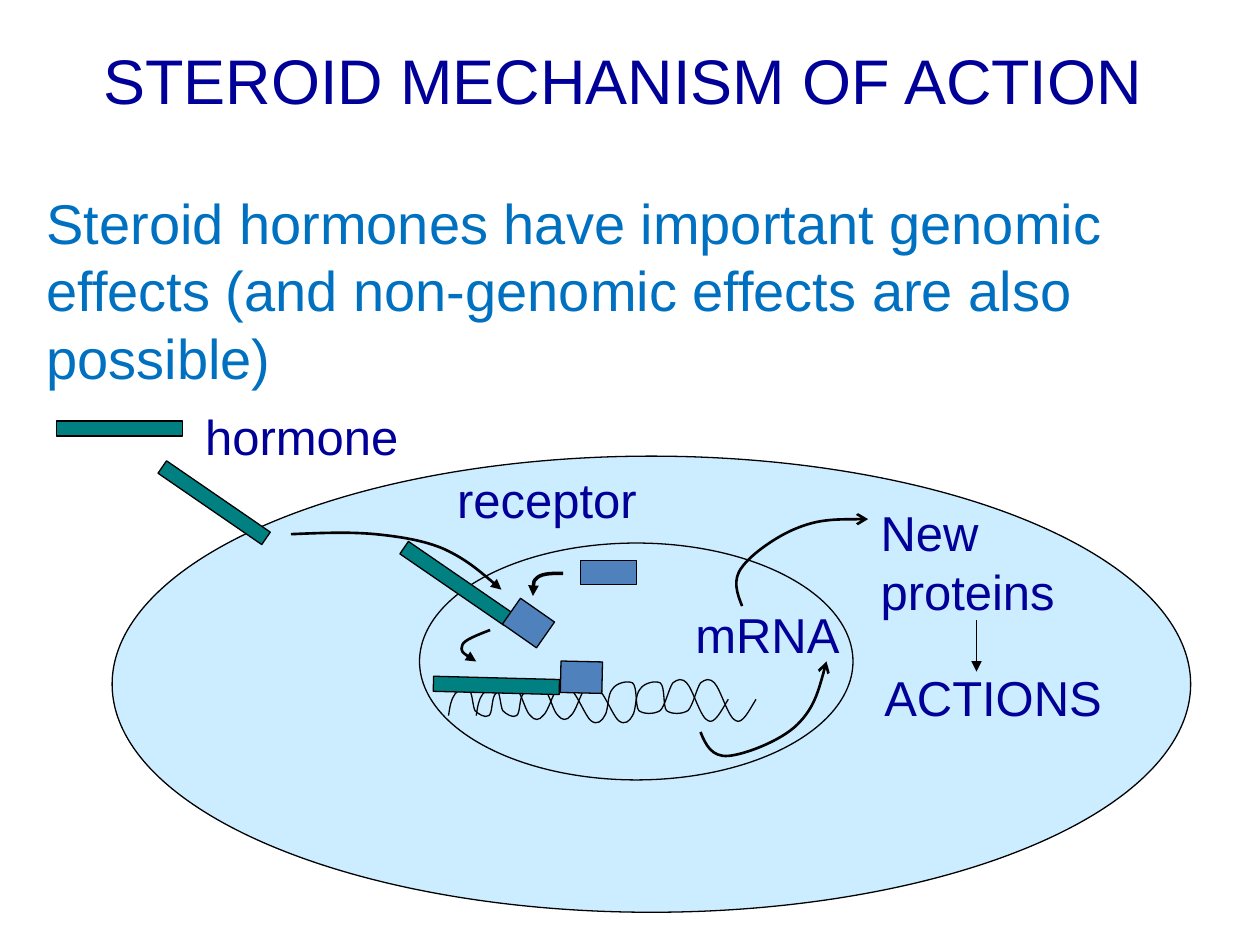
from pptx import Presentation
from pptx.dml.color import RGBColor
from pptx.enum.shapes import MSO_CONNECTOR as CONN, MSO_SHAPE as SHAPE
from pptx.enum.text import PP_ALIGN as ALIGN
from pptx.oxml.ns import qn
from pptx.util import Inches, Pt
from lxml.etree import SubElement

NAVY = RGBColor(0x00, 0x00, 0x99)
BLUE = RGBColor(0x00, 0x70, 0xC0)
CELL = RGBColor(0xCC, 0xEC, 0xFF)
HORMONE = RGBColor(0x00, 0x80, 0x80)
RECEPTOR = RGBColor(0x4F, 0x81, 0xBD)
BLACK = RGBColor(0x00, 0x00, 0x00)

HELIX_START = (3.56, 5.68)
HELIX_SHIFT = 0.22
HELIX = [
    (3.57, 5.61), (3.58, 5.55), (3.61, 5.51), (3.64, 5.47), (3.69, 5.45), (3.72, 5.47),
    (3.75, 5.49), (3.75, 5.6), (3.77, 5.64), (3.8, 5.67), (3.85, 5.7), (3.88, 5.68),
    (3.91, 5.66), (3.9, 5.55), (3.93, 5.51), (3.97, 5.47), (4.05, 5.44), (4.1, 5.47),
    (4.14, 5.5), (4.17, 5.65), (4.21, 5.68), (4.24, 5.72), (4.28, 5.72), (4.31, 5.68),
    (4.35, 5.65), (4.39, 5.5), (4.42, 5.47), (4.46, 5.43), (4.49, 5.42), (4.53, 5.47),
    (4.58, 5.51), (4.65, 5.69), (4.69, 5.72), (4.74, 5.76), (4.78, 5.72), (4.8, 5.68),
    (4.83, 5.64), (4.82, 5.51), (4.86, 5.47), (4.89, 5.42), (4.98, 5.4), (5.02, 5.42),
    (5.06, 5.45), (5.04, 5.6), (5.07, 5.64), (5.11, 5.67), (5.19, 5.67), (5.24, 5.64),
    (5.28, 5.6), (5.31, 5.46), (5.34, 5.42), (5.38, 5.39), (5.41, 5.38), (5.45, 5.42),
    (5.5, 5.47), (5.56, 5.7), (5.62, 5.72), (5.67, 5.75), (5.72, 5.65), (5.78, 5.55),
]


class Diagram:
    font = "Arial"
    thin = 0.75

    def __init__(self, slide):
        self.slide = slide
        self.shapes = slide.shapes

    def outline(self, sp, width, head=None):
        sp.line.color.rgb = BLACK
        sp.line.width = Pt(width)
        if head:
            SubElement(sp.line._get_or_add_ln(), qn("a:tailEnd"), type=head)

    def shape(self, kind, left, top, width, height, fill, rotation=0):
        sp = self.shapes.add_shape(kind, Inches(left), Inches(top), Inches(width), Inches(height))
        sp.shadow.inherit = False
        sp.rotation = rotation
        sp.fill.solid()
        sp.fill.fore_color.rgb = fill
        self.outline(sp, self.thin)

    def hormone(self, left, top, rotation=0):
        self.shape(SHAPE.RECTANGLE, left, top, 1, 0.12, HORMONE, rotation)

    def receptor(self, left, top, width, height, rotation=0):
        self.shape(SHAPE.RECTANGLE, left, top, width, height, RECEPTOR, rotation)

    def curve(self, start, points, width, head=None):
        builder = self.shapes.build_freeform(Inches(start[0]), Inches(start[1]))
        builder.add_line_segments([(Inches(x), Inches(y)) for x, y in points], close=False)
        sp = builder.convert_to_shape()
        path = next(sp._element.iter(qn("a:path")))
        steps = path.findall(qn("a:lnTo"))
        for i in range(0, len(steps), 3):
            bezier = SubElement(path, qn("a:cubicBezTo"))
            for step in steps[i:i + 3]:
                bezier.append(step[0])
                path.remove(step)
        sp.shadow.inherit = False
        sp.fill.background()
        self.outline(sp, width, head)

    def arrow(self, x1, y1, x2, y2):
        sp = self.shapes.add_connector(CONN.STRAIGHT, Inches(x1), Inches(y1), Inches(x2), Inches(y2))
        self.outline(sp, self.thin, "triangle")
        SubElement(sp._element.spPr, qn("a:effectLst"))

    def text(self, left, top, width, height, text, wrap=False):
        sp = self.shapes.add_textbox(Inches(left), Inches(top), Inches(width), Inches(height))
        tf = sp.text_frame
        tf.word_wrap = wrap
        tf.text = text
        for p in tf.paragraphs:
            self.format(p, 28, NAVY)
        return tf

    def format(self, p, size, color):
        for r in p.runs:
            r.font.name = self.font
            r.font.size = Pt(size)
            r.font.color.rgb = color

    def heading(self, left, top, width, height, title, body):
        tf = self.text(left, top, width, height, f"{title}\n{body}", wrap=True)
        first, second = tf.paragraphs
        first.alignment = ALIGN.CENTER
        self.format(first, 36, NAVY)
        second.space_before = Pt(41)
        self.format(second, 32, BLUE)


def main():
    prs = Presentation()
    prs.slide_width, prs.slide_height = Inches(10), Inches(7.5)
    d = Diagram(prs.slides.add_slide(prs.slide_layouts[6]))

    d.shape(SHAPE.OVAL, 0.89, 3.62, 8.56, 3.62, CELL)
    d.shape(SHAPE.OVAL, 3.33, 4.31, 3.44, 1.88, CELL)
    for dx in (HELIX_SHIFT, 0):
        start = (HELIX_START[0] + dx, HELIX_START[1])
        d.curve(start, [(x + dx, y) for x, y in HELIX], d.thin)
    d.hormone(3.44, 5.38, 1.5)
    d.receptor(4.49, 5.21, 0.25, 0.33, 271.3)

    d.curve((5.56, 5.81), [(5.6, 5.91), (5.65, 6.01), (5.78, 6), (5.91, 5.99), (6.2, 5.88),
                           (6.33, 5.75), (6.46, 5.62), (6.51, 5.44), (6.56, 5.25)], 1.5, "arrow")
    d.text(5.42, 4.75, 1.35, 0.57, "mRNA")
    d.curve((5.89, 4.81), [(5.85, 4.71), (5.81, 4.6), (5.89, 4.5), (5.96, 4.4), (6.17, 4.25),
                           (6.33, 4.19), (6.5, 4.12), (6.69, 4.12), (6.89, 4.12)], 1.5, "arrow")
    d.text(6.89, 3.94, 1.59, 1.03, "New\nproteins")
    d.text(6.92, 5.25, 2.78, 0.57, "ACTIONS", wrap=True)
    d.arrow(7.75, 4.92, 7.75, 5.33)
    d.curve((3.89, 5), [(3.79, 5.04), (3.68, 5.08), (3.67, 5.12),
                        (3.65, 5.17), (3.71, 5.21), (3.78, 5.25)], 1.5, "triangle")

    d.heading(0.27, 0.28, 9.35, 2.9, "STEROID MECHANISM OF ACTION",
              "Steroid hormones have important genomic effects "
              "(and non-genomic effects are also possible)")

    d.receptor(4.61, 4.45, 0.44, 0.19)
    d.hormone(0.45, 3.34)
    d.hormone(3.12, 4.57, 34.5)
    d.receptor(4.07, 4.78, 0.25, 0.33, 304.9)
    d.text(1.53, 3.18, 1.74, 0.57, "hormone")
    d.text(3.53, 3.68, 1.63, 0.57, "receptor")
    d.curve((2.31, 4.24), [(2.54, 4.23), (2.77, 4.22), (2.98, 4.24), (3.18, 4.26), (3.37, 4.29),
                           (3.53, 4.36), (3.7, 4.44), (3.84, 4.56), (3.98, 4.68)], 1.5, "triangle")
    d.hormone(1.2, 3.93, 34.5)
    d.curve((4.47, 4.55), [(4.39, 4.55), (4.31, 4.55), (4.27, 4.58),
                           (4.23, 4.61), (4.23, 4.67), (4.23, 4.73)], 2, "triangle")

    prs.save("out.pptx")


if __name__ == "__main__":
    main()
